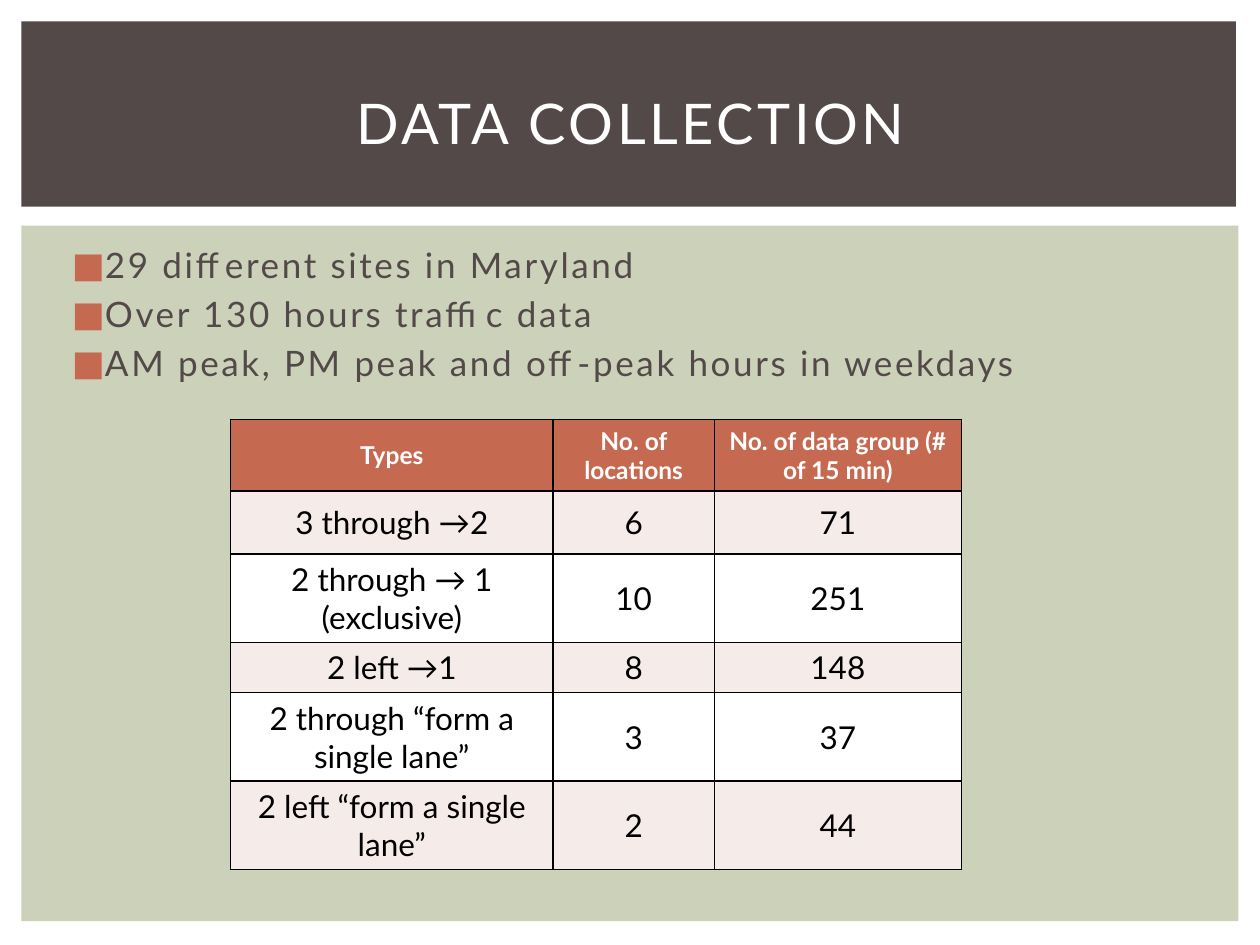
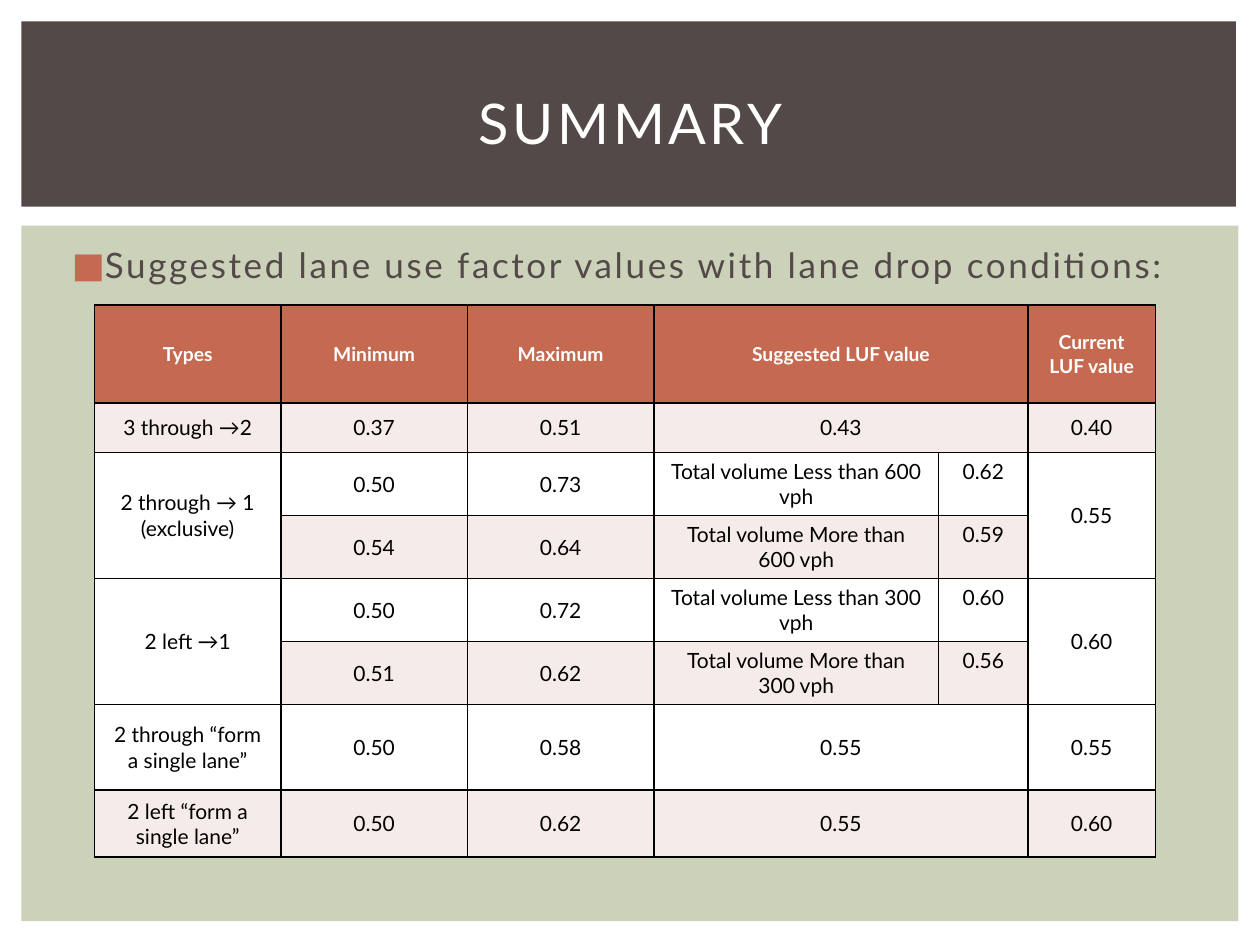
"""Build the data collection and summary slides of the lane use study."""
from dataclasses import dataclass
from itertools import product
from typing import NamedTuple, Optional

from lxml.etree import SubElement
from pptx import Presentation
from pptx.dml.color import RGBColor
from pptx.enum.shapes import MSO_SHAPE as Preset
from pptx.enum.text import MSO_ANCHOR as Anchor, MSO_AUTO_SIZE as AutoSize, PP_ALIGN as Align
from pptx.oxml.ns import qn
from pptx.util import Inches, Pt


@dataclass(frozen=True)
class Theme:
    font: str = "Lato"
    panel: str = "CCD1B9"
    band: str = "534949"
    accent: str = "C66951"
    tint: str = "F5EBE9"
    white: str = "FFFFFF"
    black: str = "000000"
    title_size: int = 32
    title_tracking: float = 2
    body_size: int = 20
    body_tracking: float = 1.5
    border_width: float = 1


class Box(NamedTuple):
    left: float
    top: float
    width: float
    height: float


class Band(NamedTuple):
    box: Box
    color: str


@dataclass(frozen=True)
class TableSpec:
    left: float
    top: float
    widths: list[float]
    heights: list[float]
    rows: list[list[Optional[str]]]
    header_size: int
    cell_size: int
    merges: tuple[tuple[int, int, int, int], ...] = ()
    top_cells: frozenset[tuple[int, int]] = frozenset()


@dataclass(frozen=True)
class SlideSpec:
    title: str
    bullets: list[str]
    table: TableSpec


THEME = Theme()
TITLE_BOX = Box(0.42, 0.39, 9.17, 1.15)
BODY_BOX = Box(0.42, 1.88, 9.19, 4.82)
BANDS = [
    Band(Box(0.17, 1.79, 9.66, 5.52), THEME.panel),
    Band(Box(0.17, 0.17, 9.64, 1.47), THEME.band),
]

COLLECTION = SlideSpec(
    "DATA COLLECTION",
    [
        "29 different sites in Maryland",
        "Over 130 hours traffic data",
        "AM peak, PM peak and off-peak hours in weekdays",
    ],
    TableSpec(
        1.83, 3.33, [2.56, 1.28, 1.96], [0.55, 0.5, 0.68, 0.39, 0.68, 0.68],
        [
            ["Types", "No. of locations", "No. of data group (# of 15 min)"],
            ["3 through →2", "6", "71"],
            ["2 through → 1 (exclusive)", "10", "251"],
            ["2 left →1", "8", "148"],
            ["2 through “form a single lane”", "3", "37"],
            ["2 left “form a single lane”", "2", "44"],
        ],
        header_size=14, cell_size=18,
    ),
)

SUMMARY = SlideSpec(
    "SUMMARY",
    ["Suggested lane use factor values with lane drop conditions:"],
    TableSpec(
        0.75, 2.42, [1.48, 1.48, 1.48, 2.26, 0.71, 1.01],
        [0.78, 0.39, 0.5, 0.5, 0.5, 0.5, 0.68, 0.53],
        [
            ["Types", "Minimum", "Maximum", "Suggested LUF value", None, "Current\nLUF value"],
            ["3 through →2", "0.37", "0.51", "0.43", None, "0.40"],
            ["2 through → 1 (exclusive)", "0.50", "0.73", "Total volume Less than 600 vph", "0.62", "0.55"],
            [None, "0.54", "0.64", "Total volume More than 600 vph", "0.59", None],
            ["2 left →1", "0.50", "0.72", "Total volume Less than 300 vph", "0.60", "0.60"],
            [None, "0.51", "0.62", "Total volume More than 300 vph", "0.56", None],
            ["2 through “form a single lane”", "0.50", "0.58", "0.55", None, "0.55"],
            ["2 left “form a single lane”", "0.50", "0.62", "0.55", None, "0.60"],
        ],
        header_size=11, cell_size=12,
        merges=tuple((row, 3, row, 4) for row in (0, 1, 6, 7))
        + tuple((row, column, row + 1, column) for row, column in product((2, 4), (0, 5))),
        top_cells=frozenset(product(range(2, 6), (3, 4))),
    ),
)


def place(shape, box: Box) -> None:
    shape.left, shape.top, shape.width, shape.height = map(Inches, box)


def style_paragraph(paragraph, size: int, color: str, bold: bool = False, tracking: float = 0) -> None:
    font = paragraph.font
    font.name, font.size, font.bold = THEME.font, Pt(size), bold
    font.color.rgb = RGBColor.from_string(color)
    if tracking:
        font._element.set("spc", str(round(tracking * 100)))


def add_bullet(paragraph) -> None:
    properties = paragraph._p.get_or_add_pPr()
    properties.set("marL", str(Inches(0.3)))
    properties.set("indent", str(Inches(-0.25)))
    color = SubElement(properties, qn("a:buClr"))
    SubElement(color, qn("a:srgbClr"), val=THEME.accent)
    SubElement(properties, qn("a:buFont"), typeface=THEME.font)
    SubElement(properties, qn("a:buChar"), char="■")


def add_borders(cell) -> None:
    properties = cell._tc.get_or_add_tcPr()
    for side in ("a:lnL", "a:lnR", "a:lnT", "a:lnB"):
        line = SubElement(properties, qn(side), w=str(Pt(THEME.border_width)))
        fill = SubElement(line, qn("a:solidFill"))
        SubElement(fill, qn("a:srgbClr"), val=THEME.black)


def prepare_layout(layout, slide) -> None:
    """Move the shared bands behind the layout's placeholders and place these."""
    for index, band in enumerate(BANDS):
        shape = slide.shapes.add_shape(Preset.RECTANGLE, *map(Inches, band.box))
        shape.shadow.inherit = False
        shape.fill.solid()
        shape.fill.fore_color.rgb = RGBColor.from_string(band.color)
        shape.line.fill.background()
        layout.shapes._spTree.insert(2 + index, shape._element)
    title, body = list(layout.placeholders)[:2]
    place(title, TITLE_BOX)
    place(body, BODY_BOX)


def fill_title(title, text: str) -> None:
    frame = title.text_frame
    frame.text = text
    frame.auto_size = AutoSize.NONE
    frame.vertical_anchor = Anchor.MIDDLE
    paragraph = frame.paragraphs[0]
    paragraph.alignment = Align.CENTER
    style_paragraph(paragraph, THEME.title_size, THEME.white, tracking=THEME.title_tracking)


def fill_body(body, bullets: list[str]) -> None:
    frame = body.text_frame
    frame.text = "\n".join(bullets)
    frame.auto_size = AutoSize.NONE
    for index, paragraph in enumerate(frame.paragraphs):
        add_bullet(paragraph)
        paragraph.space_before = Pt(0.2 * THEME.body_size if index else 0)
        style_paragraph(paragraph, THEME.body_size, THEME.band, tracking=THEME.body_tracking)


def add_table(slide, spec: TableSpec) -> None:
    box = Box(spec.left, spec.top, sum(spec.widths), sum(spec.heights))
    table = slide.shapes.add_table(len(spec.heights), len(spec.widths), *map(Inches, box)).table
    for column, width in zip(table.columns, spec.widths):
        column.width = Inches(width)
    for row, height in zip(table.rows, spec.heights):
        row.height = Inches(height)
    for top, left, bottom, right in spec.merges:
        table.cell(top, left).merge(table.cell(bottom, right))
    for row, column in product(range(len(spec.heights)), range(len(spec.widths))):
        cell = table.cell(row, column)
        header = row == 0
        fill = THEME.accent if header else THEME.tint if row % 2 else THEME.white
        add_borders(cell)
        cell.fill.solid()
        cell.fill.fore_color.rgb = RGBColor.from_string(fill)
        cell.vertical_anchor = Anchor.TOP if (row, column) in spec.top_cells else Anchor.MIDDLE
        cell.text = spec.rows[row][column] or ""
        for paragraph in cell.text_frame.paragraphs:
            paragraph.alignment = Align.CENTER
            size, color = (spec.header_size, THEME.white) if header else (spec.cell_size, THEME.black)
            style_paragraph(paragraph, size, color, bold=header)


def main() -> None:
    presentation = Presentation()
    presentation.slide_width, presentation.slide_height = Inches(10), Inches(7.5)
    layout = presentation.slide_layouts.get_by_name("Title and Content")
    for index, spec in enumerate((COLLECTION, SUMMARY)):
        slide = presentation.slides.add_slide(layout)
        if index == 0:
            prepare_layout(layout, slide)
        fill_title(slide.shapes.title, spec.title)
        fill_body(slide.placeholders[1], spec.bullets)
        add_table(slide, spec.table)
    presentation.save("out.pptx")


if __name__ == "__main__":
    main()
